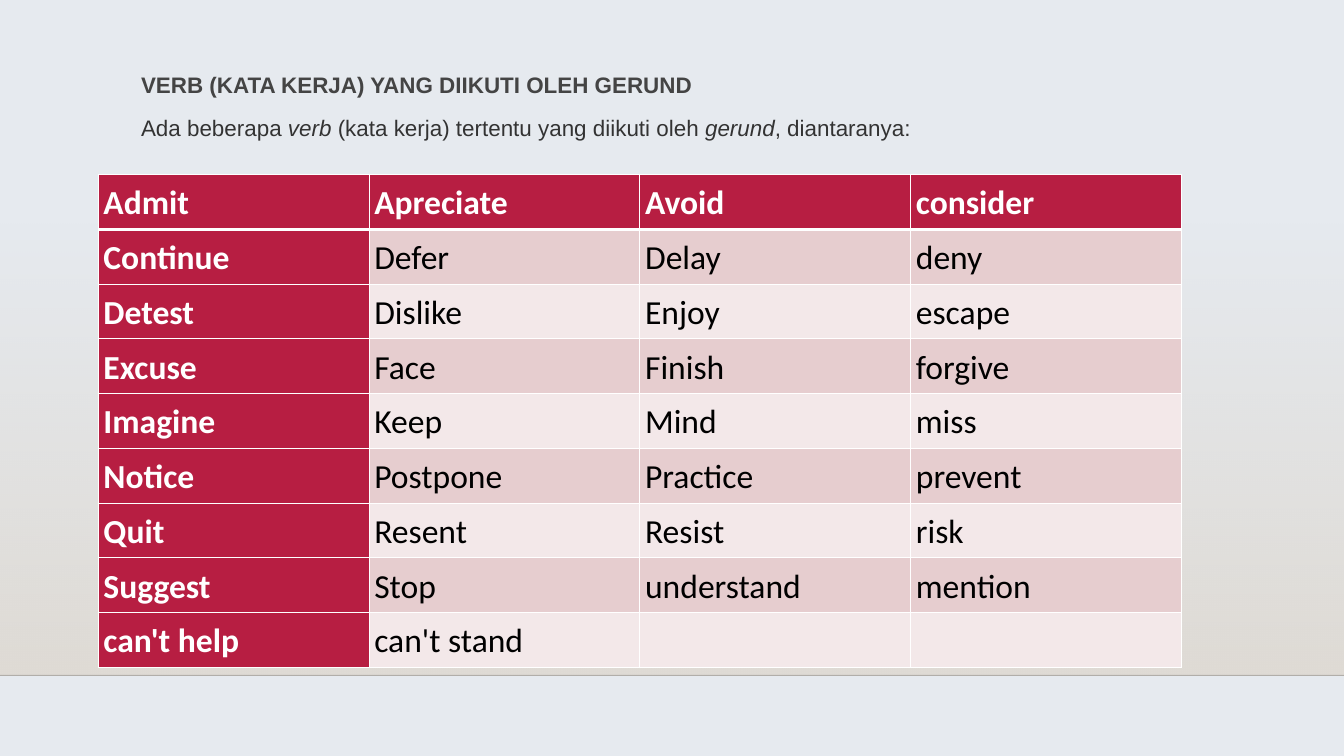
import dataclasses

import lxml.etree
import pptx
import pptx.dml.color
import pptx.enum.shapes
import pptx.oxml
import pptx.oxml.ns
import pptx.util

qn = pptx.oxml.ns.qn
Pt = pptx.util.Pt
Inches = pptx.util.Inches
SLIDE_WIDTH, SLIDE_HEIGHT = Inches(20), Inches(11.25)
GRID = 100

HEADING = "VERB (KATA KERJA) YANG DIIKUTI OLEH GERUND"
INTRO = [
    ("Ada beberapa ", False),
    ("verb", True),
    (" (kata kerja) tertentu yang diikuti oleh ", False),
    ("gerund", True),
    (", diantaranya:", False),
]
VERBS = [
    ["Admit", "Apreciate", "Avoid", "consider"],
    ["Continue", "Defer", "Delay", "deny"],
    ["Detest", "Dislike", "Enjoy", "escape"],
    ["Excuse", "Face", "Finish", "forgive"],
    ["Imagine", "Keep", "Mind", "miss"],
    ["Notice", "Postpone", "Practice", "prevent"],
    ["Quit", "Resent", "Resist", "risk"],
    ["Suggest", "Stop", "understand", "mention"],
    ["can't help", "can't stand", "", ""],
]


@dataclasses.dataclass(frozen=True)
class Theme:
    background: str = "E6EAEF"
    floor: str = "DFDBD5"
    horizon: str = "000001"
    accent: str = "B71E42"
    bands: tuple = ("F3E8E9", "E6CDCF")
    white: str = "FFFFFF"
    verb: str = "000000"
    heading: str = "444444"
    intro: str = "333333"
    intro_font: str = "Arial"
    verb_font: str = "Calibri"
    intro_size: int = 24
    verb_size: int = 36
    line_spacing: float = 1.07


@dataclasses.dataclass(frozen=True)
class Box:
    column: float
    row: float
    columns: float
    rows: float

    def place(self):
        across, down = SLIDE_WIDTH / GRID, SLIDE_HEIGHT / GRID
        return (round(self.column * across), round(self.row * down),
                round(self.columns * across), round(self.rows * down))


THEME = Theme()


def rgb(value):
    return pptx.dml.color.RGBColor.from_string(value)


def set_alpha(color, percent):
    lxml.etree.SubElement(color, qn("a:alpha"), val=str(percent * 1000))


def style(paragraph, font_name, size, color, bold):
    paragraph.line_spacing = THEME.line_spacing
    paragraph.space_after = Pt(12)
    font = paragraph.font
    font.name, font.size, font.bold = font_name, Pt(size), bold
    font.color.rgb = rgb(color)


def add_backdrop(slide, box):
    slide.background.fill.solid()
    slide.background.fill.fore_color.rgb = rgb(THEME.background)
    left, top, width, height = box.place()
    floor = slide.shapes.add_shape(
        pptx.enum.shapes.MSO_SHAPE.RECTANGLE, left, top, width, height)
    floor.shadow.inherit = False
    floor.line.fill.background()
    floor.fill.gradient()
    floor.fill.gradient_angle = 270
    for stop, position in zip(floor.fill.gradient_stops, (0, 1)):
        stop.color.rgb = rgb(THEME.floor)
        stop.position = position
    set_alpha(next(floor.element.iter(qn("a:srgbClr"))), 0)

    bottom = top + height
    horizon = slide.shapes.add_connector(
        pptx.enum.shapes.MSO_CONNECTOR.STRAIGHT, left, bottom, left + width, bottom)
    horizon.line.width = Pt(1)
    horizon.line.color.rgb = rgb(THEME.horizon)
    set_alpha(next(horizon.element.iter(qn("a:srgbClr"))), 20)
    lxml.etree.SubElement(horizon.element.spPr, qn("a:effectLst"))


def add_intro(slide, box):
    frame = slide.shapes.add_textbox(*box.place()).text_frame
    frame.word_wrap = True
    heading = frame.paragraphs[0]
    heading.text = HEADING
    style(heading, THEME.intro_font, THEME.intro_size, THEME.heading, True)
    sentence = frame.add_paragraph()
    for words, italic in INTRO:
        run = sentence.add_run()
        run.text = words
        run.font.italic = italic
    style(sentence, THEME.intro_font, THEME.intro_size, THEME.intro, False)
    sentence.space_before, sentence.space_after = Pt(3.8), Pt(22.5)


def set_borders(cell, widths):
    properties = cell._tc.get_or_add_tcPr()
    for position, (side, points) in enumerate(widths.items()):
        border = lxml.etree.Element(qn(f"a:ln{side}"), w=str(Pt(points)))
        fill = lxml.etree.SubElement(border, qn("a:solidFill"))
        lxml.etree.SubElement(fill, qn("a:srgbClr"), val=THEME.white)
        properties.insert(position, border)


def add_verb_table(slide, box):
    table = slide.shapes.add_table(len(VERBS), len(VERBS[0]), *box.place()).table
    table.first_col = True
    table.horz_banding = False
    for row, verbs in enumerate(VERBS):
        for column, verb in enumerate(verbs):
            cell = table.cell(row, column)
            is_header = row == 0 or column == 0
            cell.margin_left = cell.margin_right = Inches(0.08)
            cell.margin_top = cell.margin_bottom = Inches(0.08)
            cell.fill.solid()
            cell.fill.fore_color.rgb = rgb(
                THEME.accent if is_header else THEME.bands[row % 2])
            set_borders(cell, {"L": 1, "R": 1, "T": 3 if row == 1 else 1,
                               "B": 3 if row == 0 else 1})
            cell.text = verb
            style(cell.text_frame.paragraphs[0], THEME.verb_font, THEME.verb_size,
                  THEME.white if is_header else THEME.verb, is_header)


def main():
    presentation = pptx.Presentation()
    presentation.slide_width, presentation.slide_height = SLIDE_WIDTH, SLIDE_HEIGHT
    slide = presentation.slides.add_slide(presentation.slide_layouts[6])
    add_backdrop(slide, Box(0, 29.4, 100, 59.93))
    add_verb_table(slide, Box(7.3, 23.1, 80.6, 63.9))
    add_intro(slide, Box(10, 8.7, 72.1, 10.4))
    presentation.save("out.pptx")


if __name__ == "__main__":
    main()
